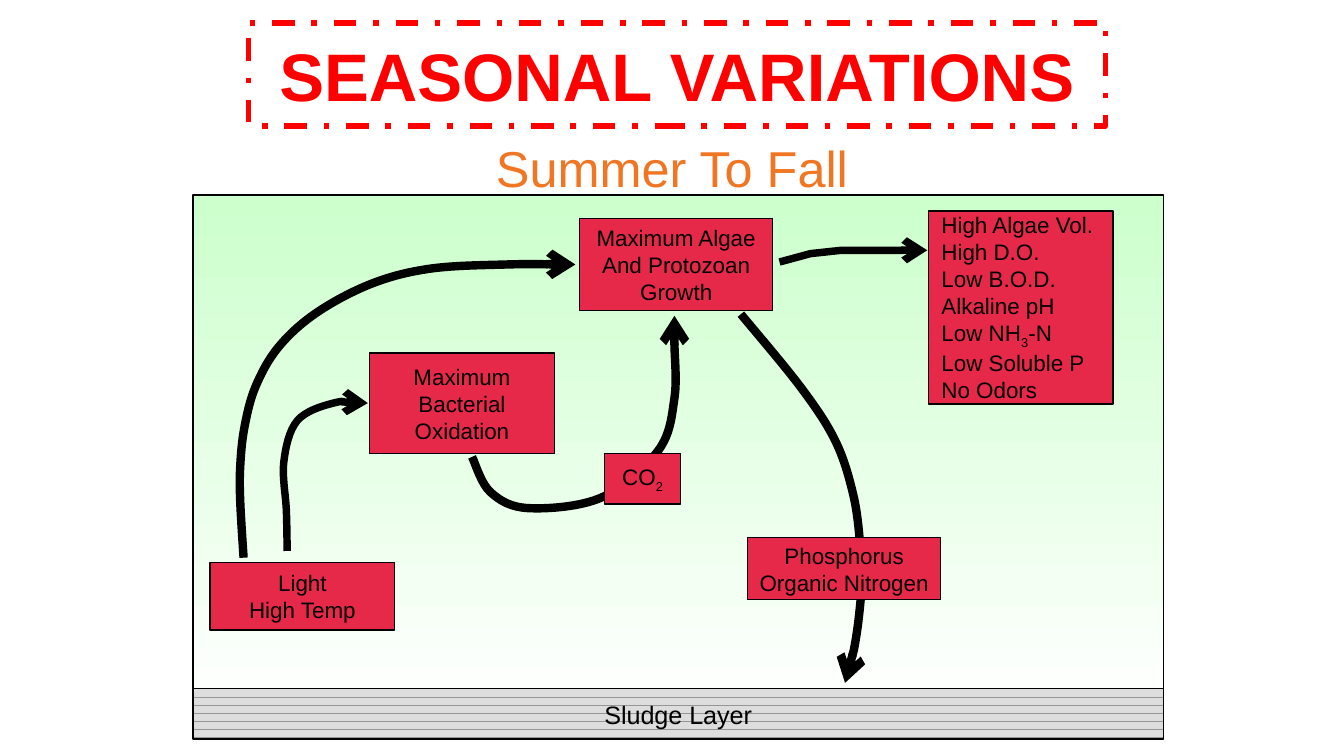
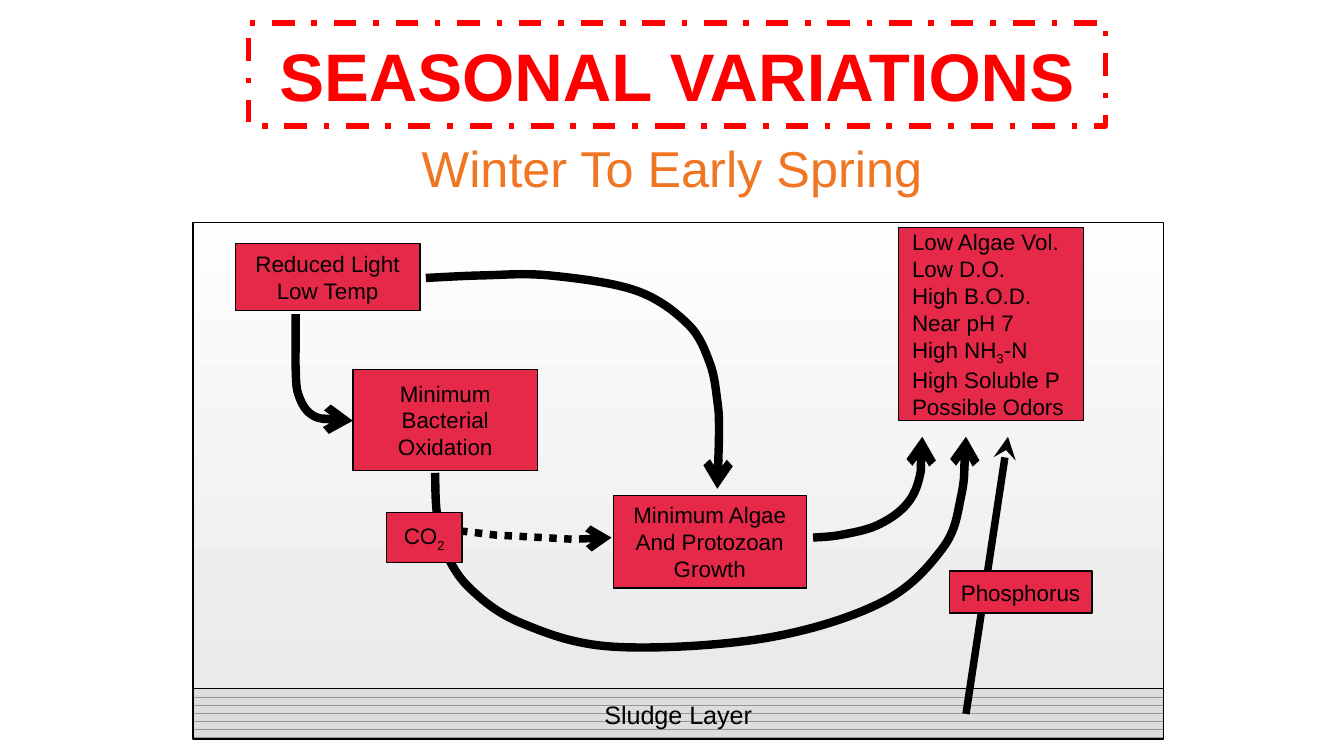
from dataclasses import dataclass

from lxml import etree
from pptx import Presentation, util as u
from pptx.dml.color import RGBColor
from pptx.enum import dml, shapes, text
from pptx.oxml.ns import qn

BLACK = RGBColor(0x00, 0x00, 0x00)
TITLE_RED = RGBColor(0xFF, 0x00, 0x00)
SEASON_ORANGE = RGBColor(0xF0, 0x76, 0x24)
LABEL_RED = RGBColor(0xE6, 0x29, 0x49)
SLUDGE_LINES = RGBColor(0x96, 0x96, 0x96)
SLUDGE_GREY = RGBColor(0xDD, 0xDD, 0xDD)
SUMMER_WATER = RGBColor(0xCC, 0xFF, 0xCC), RGBColor(0xFD, 0xFF, 0xFD)
WINTER_WATER = RGBColor(0xFE, 0xFE, 0xFE), RGBColor(0xEA, 0xEA, 0xEA)

FONT = "Arial"
COLUMNS, ROWS = 160, 90
CELL = u.Inches(10) // COLUMNS


@dataclass
class Box:
    """A rectangle in grid cells."""
    left: float
    top: float
    width: float
    height: float

    def inner(self, left, top, width, height):
        return Box(self.left + left, self.top + top, width, height)

    def point(self, column, row):
        return cells(self.left + column), cells(self.top + row)

    def emu(self):
        return [cells(n) for n in (self.left, self.top, self.width, self.height)]


TITLE = Box(29.6, 2.7, 102, 12.3)
SEASON = Box(20, 15.5, 120, 9)
DIAGRAM = Box(23, 23, 115.5, 65)
WATER_BOTTOM = 59


def cells(count):
    return u.Emu(round(count * CELL))


def write(frame, lines, size, color=BLACK, align=text.PP_ALIGN.CENTER, bold=False):
    """Write one paragraph per line; the parts between tildes are subscripts."""
    for number, line in enumerate(lines):
        paragraph = frame.paragraphs[0] if number == 0 else frame.add_paragraph()
        paragraph.alignment = align
        for index, part in enumerate(line.split("~")):
            run = paragraph.add_run()
            run.text = part
            run.font.name, run.font.size = FONT, u.Pt(size)
            run.font.color.rgb, run.font.bold = color, bold
            if index % 2:
                run._r.get_or_add_rPr().set("baseline", "-25000")


def add_title(slide, box):
    title = slide.shapes.title
    title.left, title.top, title.width, title.height = box.emu()
    title.line.color.rgb = TITLE_RED
    title.line.width = u.Pt(3)
    title.line.dash_style = dml.MSO_LINE.DASH_DOT
    frame = title.text_frame
    frame.auto_size = text.MSO_AUTO_SIZE.NONE
    frame.vertical_anchor = text.MSO_ANCHOR.MIDDLE
    write(frame, ["SEASONAL VARIATIONS"], 36, TITLE_RED, bold=True)


def add_season(slide, box, season):
    frame = slide.shapes.add_textbox(*box.emu()).text_frame
    frame.word_wrap = True
    frame.auto_size = text.MSO_AUTO_SIZE.SHAPE_TO_FIT_TEXT
    write(frame, [season], 27, SEASON_ORANGE)


def add_outlined_box(slide, box):
    shape = slide.shapes.add_shape(shapes.MSO_SHAPE.RECTANGLE, *box.emu())
    shape.shadow.inherit = False
    shape.line.color.rgb = BLACK
    shape.line.width = u.Pt(0.75)
    frame = shape.text_frame
    frame.word_wrap = False
    frame.vertical_anchor = text.MSO_ANCHOR.MIDDLE
    return shape


def add_label(slide, box, lines, align=text.PP_ALIGN.CENTER):
    label = add_outlined_box(slide, box)
    label.fill.solid()
    label.fill.fore_color.rgb = LABEL_RED
    write(label.text_frame, lines, 12, align=align)


def add_pond(slide, box, water_top, water_colors):
    water = add_outlined_box(
        slide, box.inner(0, water_top, box.width, WATER_BOTTOM - water_top))
    water.fill.gradient()
    water.fill.gradient_angle = 270
    for stop, color in zip(water.fill.gradient_stops, water_colors):
        stop.color.rgb = color

    sludge = add_outlined_box(
        slide, box.inner(0, WATER_BOTTOM, box.width, box.height - WATER_BOTTOM))
    sludge.fill.patterned()
    sludge.fill.pattern = dml.MSO_PATTERN.DASHED_HORIZONTAL
    sludge.fill.fore_color.rgb = SLUDGE_LINES
    sludge.fill.back_color.rgb = SLUDGE_GREY
    write(sludge.text_frame, ["Sludge Layer"], 13.5)


def style_arrow(arrow, width, head="arrow", dash=None):
    arrow.line.color.rgb = BLACK
    arrow.line.width = u.Pt(width)
    if dash:
        arrow.line.dash_style = dash
    outline = arrow._element.spPr.find(qn("a:ln"))
    etree.SubElement(outline, qn("a:tailEnd"), type=head)


def smooth_handles(knots):
    """Follow each knot with the Bézier handles of a smooth curve through all."""
    padded = [knots[0], *knots, knots[-1]]
    points = []
    for before, start, end, after in zip(padded, padded[1:], padded[2:], padded[3:]):
        points.append([s + (e - b) / 6 for b, s, e in zip(before, start, end)])
        points.append([e - (a - s) / 6 for s, e, a in zip(start, end, after)])
        points.append(end)
    return points


def bend_segments(freeform):
    """Turn every three straight segments into one cubic curve."""
    outline = next(freeform._element.spPr.iter(qn("a:path")))
    segments = outline.findall(qn("a:lnTo"))
    for first in range(0, len(segments), 3):
        curve = etree.SubElement(outline, qn("a:cubicBezTo"))
        for segment in segments[first:first + 3]:
            curve.append(segment[0])
            outline.remove(segment)


def add_flow(slide, box, knots, width=4.5, curved=True, dash=None):
    points = smooth_handles(knots) if curved else knots[1:]
    builder = slide.shapes.build_freeform(*box.point(*knots[0]))
    builder.add_line_segments([box.point(*p) for p in points], close=False)
    flow = builder.convert_to_shape()
    if curved:
        bend_segments(flow)
    flow.fill.background()
    flow.shadow.inherit = False
    style_arrow(flow, width, dash=dash)


def add_straight_flow(slide, box, start, end):
    flow = slide.shapes.add_connector(
        shapes.MSO_CONNECTOR.STRAIGHT, *box.point(*start), *box.point(*end))
    style_arrow(flow, 4, head="stealth")
    etree.SubElement(flow._element.spPr, qn("a:effectLst"))


def add_stages(slide, box, extreme, light, places, phosphorus, results):
    """Label the stages; places maps each stage to its column and row."""
    stages = {
        "light": (22, 8, light),
        "bacteria": (22, 12, [extreme, "Bacterial", "Oxidation"]),
        "algae": (23, 11, [f"{extreme} Algae", "And Protozoan", "Growth"]),
        "carbon": (9, 6, ["CO~2~"]),
    }
    for stage, (width, height, lines) in stages.items():
        add_label(slide, box.inner(*places[stage], width, height), lines)
    width, height, lines = phosphorus
    add_label(slide, box.inner(*places["phosphorus"], width, height), lines)
    add_label(slide, box.inner(*places["results"], 22, 23), results,
              text.PP_ALIGN.LEFT)


def add_season_slide(deck, season, water_top, water_colors):
    slide = deck.slides.add_slide(deck.slide_layouts[5])
    add_title(slide, TITLE)
    add_season(slide, SEASON, season)
    add_pond(slide, DIAGRAM, water_top, water_colors)
    return slide


def add_summer(deck, box):
    slide = add_season_slide(deck, "Summer To Fall", 0.2, SUMMER_WATER)
    algae_to_results = [(69.8, 8.2), (73.5, 7.2), (77.2, 6.8), (87.4, 6.8)]
    light_to_bacteria = [(11.2, 42.6), (11.1, 37.8), (10.8, 32), (12.4, 27.1),
                         (16.7, 25), (20.8, 25)]
    light_to_algae = [(6, 43.4), (5.6, 36.7), (5.6, 32.5), (6.1, 27.9), (7.4, 23.1),
                      (10.1, 18.4), (14.6, 14.3), (21.2, 10.8), (28.2, 9),
                      (37.2, 8.5), (45.5, 8.5)]
    bacteria_to_algae = [(33.2, 31.4), (35.4, 35.6), (40, 37.5), (48.7, 36.2),
                         (55.4, 30.6), (57.3, 24.4), (57.3, 17.8), (57.3, 14.6)]
    algae_to_sludge = [(65.2, 14.4), (72.4, 23.2), (76.5, 29.6), (78.6, 36),
                       (79.4, 41.8), (79.6, 46.3), (78.9, 53), (77.6, 58.3)]
    add_flow(slide, box, algae_to_results, width=4, curved=False)
    add_flow(slide, box, light_to_bacteria, width=4)
    for knots in (light_to_algae, bacteria_to_algae, algae_to_sludge):
        add_flow(slide, box, knots)
    add_stages(
        slide, box, "Maximum", ["Light", "High Temp"],
        {"light": (2, 44), "bacteria": (21, 19), "algae": (46, 3),
         "carbon": (49, 31), "phosphorus": (66, 41), "results": (87.5, 2.1)},
        (23, 7.4, ["Phosphorus", "Organic Nitrogen"]),
        ["High Algae Vol.", "High D.O.", "Low B.O.D.", "Alkaline pH",
         "Low NH~3~-N", "Low Soluble P", "No Odors"])


def add_winter(deck, box):
    slide = add_season_slide(deck, "Winter To Early Spring", 3.5, WINTER_WATER)
    carbon_to_algae = [(30, 40), (36, 40.7), (41.6, 41), (45.3, 41.2), (49.8, 41)]
    light_to_algae = [(27.7, 10.1), (34.4, 9.8), (42.4, 9.8), (52.7, 11.6),
                      (58.9, 15.6), (61.5, 20.2), (62.4, 24.7), (62.6, 28.2),
                      (62.4, 35.2)]
    light_to_bacteria = [(12.2, 14.4), (12.2, 18), (12.2, 20.8), (12.5, 23.9),
                         (14, 26.3), (17, 27.1), (19, 27.1)]
    bacteria_to_results = [(28.8, 33.3), (29, 38), (30, 42.6), (33, 47.1),
                           (39.1, 51.2), (50, 54), (68, 53), (82, 48.7),
                           (89.2, 42.3), (91.4, 36.2), (92, 29)]
    algae_to_results = [(73.8, 41), (77, 40.7), (81.3, 39.6), (84.7, 37.3),
                        (86.4, 34.1), (86.8, 29)]
    add_flow(slide, box, carbon_to_algae, width=4, curved=False,
             dash=dml.MSO_LINE.ROUND_DOT)
    add_straight_flow(slide, box, (92, 62), (97, 29))
    for knots in (light_to_algae, light_to_bacteria, bacteria_to_results,
                  algae_to_results):
        add_flow(slide, box, knots)
    add_stages(
        slide, box, "Minimum", ["Reduced Light", "Low Temp"],
        {"light": (5, 6), "bacteria": (19, 21), "algae": (50, 36),
         "carbon": (23, 38), "phosphorus": (90, 45), "results": (84, 4.1)},
        (17, 5, ["Phosphorus"]),
        ["Low Algae Vol.", "Low D.O.", "High B.O.D.", "Near pH 7",
         "High NH~3~-N", "High Soluble P", "Possible Odors"])


def main():
    deck = Presentation()
    deck.slide_width, deck.slide_height = cells(COLUMNS), cells(ROWS)
    add_summer(deck, DIAGRAM)
    add_winter(deck, DIAGRAM)
    deck.save("out.pptx")


if __name__ == "__main__":
    main()
